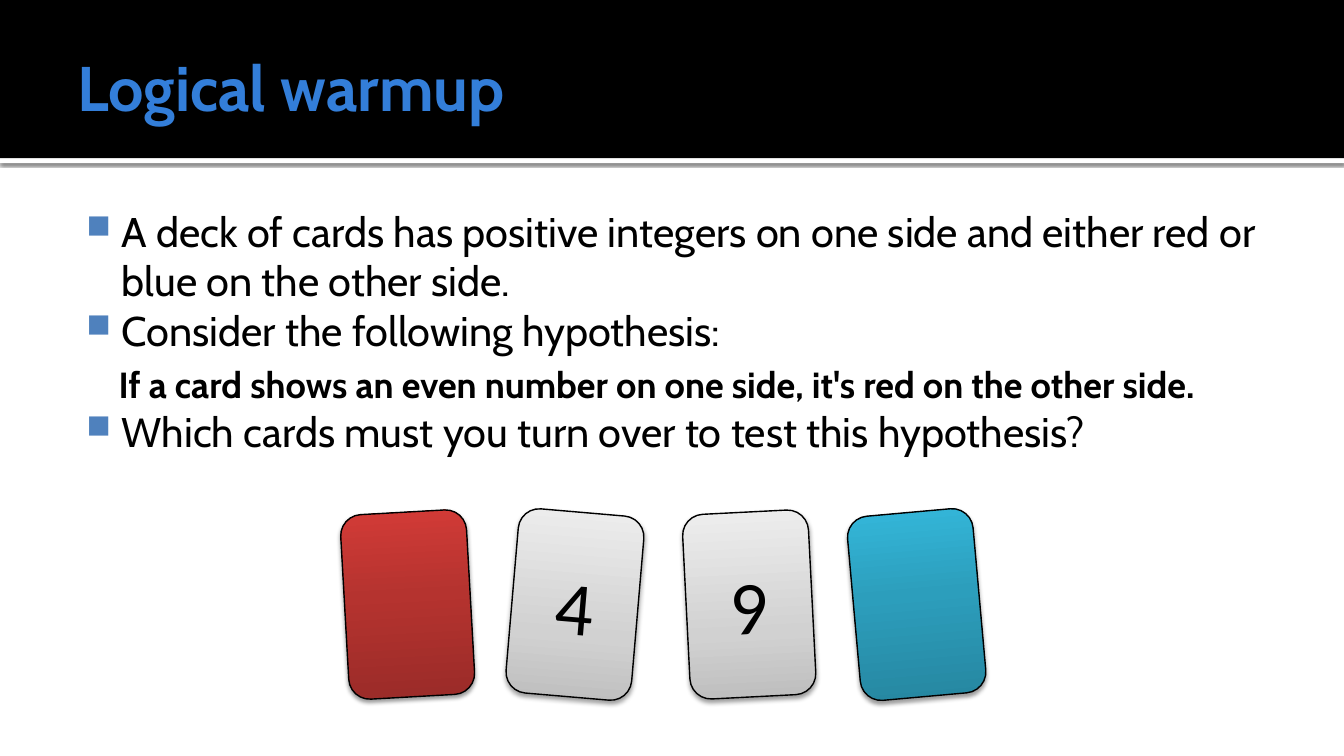
from copy import deepcopy

from lxml.etree import SubElement
from pptx import Presentation
from pptx.dml.color import RGBColor
from pptx.enum.shapes import MSO_SHAPE as Shape
from pptx.enum.text import MSO_ANCHOR as Anchor, PP_ALIGN as Align
from pptx.oxml.ns import qn
from pptx.util import Pt

PAGE_WIDTH, PAGE_HEIGHT = 960, 540
HEADING_FONT, NUMBER_FONT = "Cabin", "Calibri"
RED = [(0, "9A2B28"), (0.55, "B5332F"), (1, "D33B37")]
GRAY = [(0, "BDBDBD"), (0.35, "D1D1D1"), (1, "EEEEEE")]
BLUE = [(0, "2686A0"), (0.55, "2C9EBC"), (1, "34B8DB")]


def color(hex_code):
    return RGBColor.from_string(hex_code)


def style_font(font, name, size, hex_code, bold=False):
    font.name, font.size, font.bold = name, Pt(size), bold
    font.color.rgb = color(hex_code)


def add_shape(page, kind, left, top, width, height):
    shape = page.shapes.add_shape(kind, Pt(left), Pt(top), Pt(width), Pt(height))
    shape.shadow.inherit = False
    return shape


def add_band(page, left, top, width, height, fill):
    band = add_shape(page, Shape.RECTANGLE, left, top, width, height)
    band.fill.solid()
    band.fill.fore_color.rgb = color(fill)
    band.line.fill.background()
    return band


def add_shadow(shape, opacity, blur, distance):
    effects = shape._element.spPr.find(qn("a:effectLst"))
    shadow = SubElement(effects, qn("a:outerShdw"), blurRad=str(Pt(blur)),
                        dist=str(Pt(distance)), dir="5400000",
                        algn="ctr", rotWithShape="0")
    black = SubElement(shadow, qn("a:srgbClr"), val="000000")
    SubElement(black, qn("a:alpha"), val=str(opacity * 1000))


def fill_gradient(shape, stops):
    shape.fill.gradient()
    shape.fill.gradient_angle = 90
    stop_list = shape._element.spPr.find(qn("a:gradFill")).find(qn("a:gsLst"))
    stop_list.append(deepcopy(stop_list[0]))
    for stop, (position, hex_code) in zip(shape.fill.gradient_stops, stops):
        stop.position = position
        stop.color.rgb = color(hex_code)


def add_text_frame(page, left, top, width, height, insets):
    box = page.shapes.add_textbox(Pt(left), Pt(top), Pt(width), Pt(height))
    frame = box.text_frame
    frame.word_wrap = True
    (frame.margin_left, frame.margin_top,
     frame.margin_right, frame.margin_bottom) = map(Pt, insets)
    return frame


def indent(para, left, first_line=0):
    props = para._p.get_or_add_pPr()
    props.set("marL", str(Pt(left)))
    props.set("indent", str(Pt(first_line)))
    return props


def add_bullet(para):
    props = indent(para, 34.56, -25.2)
    bullet_color = SubElement(props, qn("a:buClr"))
    SubElement(bullet_color, qn("a:srgbClr"), val="4F81BD")
    SubElement(props, qn("a:buSzPct"), val="80000")
    SubElement(props, qn("a:buChar"), char="■")


# Black header with a shadowed white rule under it
def add_header(page, left, top, width, height, title):
    rule = add_band(page, left, top + height, width, 3.6, "FFFFFF")
    add_shadow(rule, 60, 2.5, 0.8)
    add_band(page, left, top, width, height, "000000")
    frame = add_text_frame(page, left + 48, top + 12, width - 96, height - 14,
                           (7.2, 3.6, 3.6, 3.6))
    frame.vertical_anchor = Anchor.MIDDLE
    frame.text = title
    style_font(frame.paragraphs[0].runs[0].font, HEADING_FONT, 45, "337ED9", True)


# Bulleted statements, with the hypothesis in bold
def add_body(page, left, top, width, height, lines):
    frame = add_text_frame(page, left, top, width, height, (4.32, 7.2, 7.2, 3.6))
    frame.text = "\n".join(text for text, _ in lines)
    for para, (_, is_hypothesis) in zip(frame.paragraphs, lines):
        if is_hypothesis:
            para.level = 1
            indent(para, 32.4)
            para.space_before = Pt(5.2)
        else:
            add_bullet(para)
        size = 25.9 if is_hypothesis else 29.6
        style_font(para.runs[0].font, HEADING_FONT, size, "000000", is_hypothesis)


# One tilted playing card
def add_card(page, left, top, width, height, tilt, stops, number):
    card = add_shape(page, Shape.ROUNDED_RECTANGLE, left, top, width, height)
    card.rotation = tilt
    fill_gradient(card, stops)
    card.line.color.rgb = color("000000")
    card.line.width = Pt(1)
    add_shadow(card, 38, 3.5 if number else 3.1, 2)
    if number:
        frame = card.text_frame
        frame.vertical_anchor = Anchor.MIDDLE
        frame.text = number
        para = frame.paragraphs[0]
        para.alignment = Align.CENTER
        style_font(para.runs[0].font, NUMBER_FONT, 54, "000000")


# Row of cards, each with its own offset and tilt
def add_cards(page, left, top, width, height):
    cards = [(0, -3.2, RED, ""), (119.5, 4.9, GRAY, "4"),
             (244, -2.9, GRAY, "9"), (363.6, -5.1, BLUE, "")]
    for offset, tilt, stops, number in cards:
        add_card(page, left + offset, top, width, height, tilt % 360, stops, number)


def main():
    deck = Presentation()
    deck.slide_width, deck.slide_height = Pt(PAGE_WIDTH), Pt(PAGE_HEIGHT)
    page = deck.slides.add_slide(deck.slide_layouts[6])
    add_header(page, 0, 0, PAGE_WIDTH, 113, "Logical warmup")
    add_body(page, 48, 139.7, 864, 214.6, [
        ("A deck of cards has positive integers on one side and either red or "
         "blue on the other side.", False),
        ("Consider the following hypothesis:", False),
        ("If a card shows an even number on one side, it's red on the other side.",
         True),
        ("Which cards must you turn over to test this hypothesis?", False),
    ])
    add_cards(page, 246.2, 365.8, 90, 132)
    deck.save("out.pptx")


if __name__ == "__main__":
    main()
